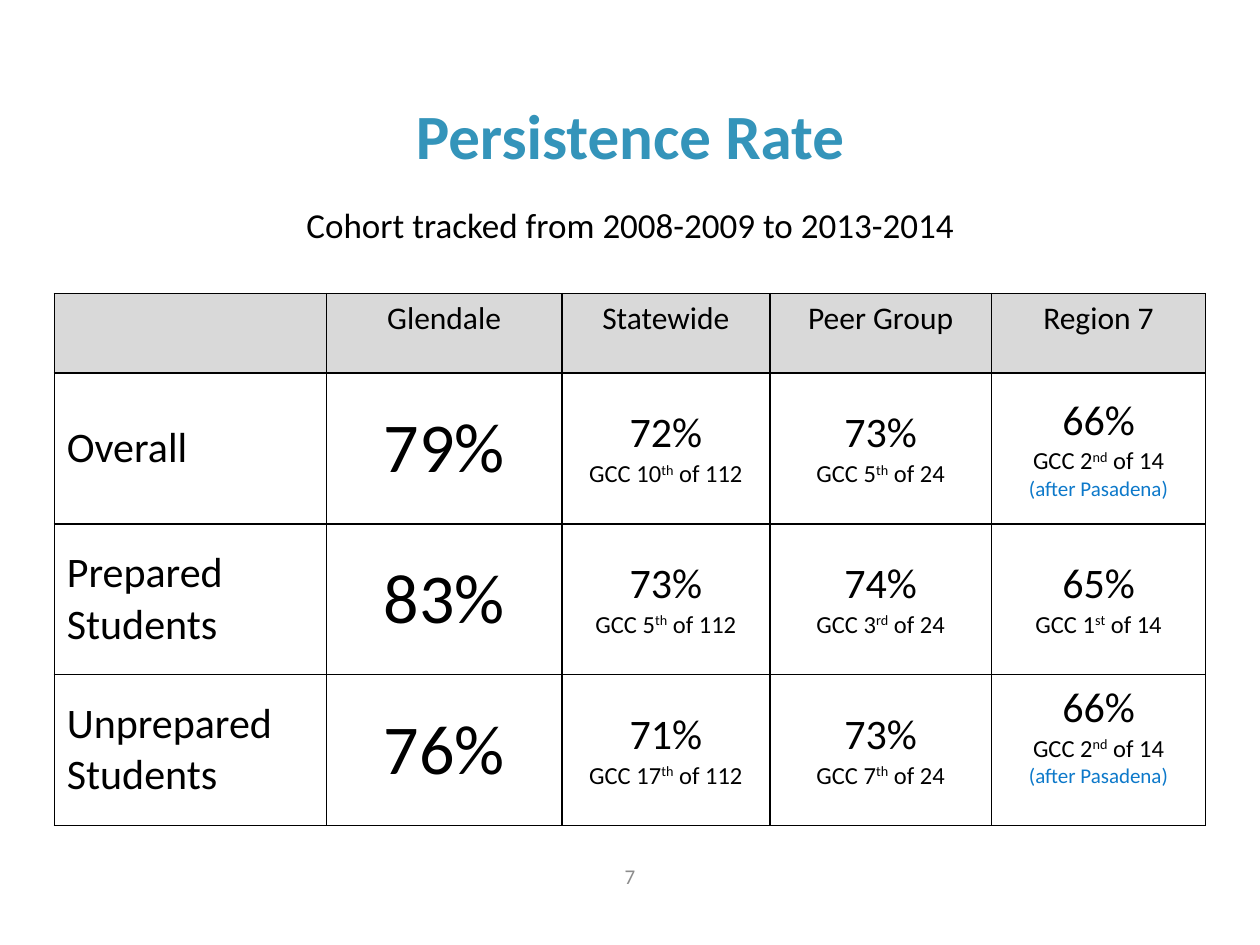
from lxml import etree
from pptx import Presentation
from pptx.dml.color import RGBColor
from pptx.enum.text import MSO_ANCHOR, PP_ALIGN
from pptx.oxml.ns import qn
from pptx.util import Pt

LEFT, CENTER = PP_ALIGN.LEFT, PP_ALIGN.CENTER
TOP, MIDDLE = MSO_ANCHOR.TOP, MSO_ANCHOR.MIDDLE
FONT = "Calibri"
BLACK, TEAL, BLUE, GRAY, HEADER_FILL = "000000", "3494BA", "0D79CA", "8C8C8C", "D9D9D9"

# Content: each comparison is rate, rank, ordinal suffix, group size, optional note
HEADERS = ["", "Glendale", "Statewide", "Peer Group", "Region 7"]
NOTE = "(after Pasadena)"
ROWS = [
    (["Overall"], "79%", [("72%", 10, "th", 112, ""), ("73%", 5, "th", 24, ""),
                          ("66%", 2, "nd", 14, NOTE)]),
    (["Prepared", "Students"], "83%", [("73%", 5, "th", 112, ""), ("74%", 3, "rd", 24, ""),
                                       ("65%", 1, "st", 14, "")]),
    (["Unprepared", "Students"], "76%", [("71%", 17, "th", 112, ""), ("73%", 7, "th", 24, ""),
                                         ("66%", 2, "nd", 14, NOTE)]),
]
COLUMN_WIDTHS = [155.5, 134.6, 118.8, 126.7, 122.4]
ROW_HEIGHTS = [45.4, 86.2, 86.2, 86.2]
TABLE_LEFT, TABLE_TOP = 31, 167.8


def rgb(color):
    return RGBColor.from_string(color)


def write(frame, lines, align=CENTER):
    """Each line is (spans, size, color); a span is (text, raised)."""
    for index, (spans, size, color) in enumerate(lines):
        para = frame.paragraphs[0] if index == 0 else frame.add_paragraph()
        para.alignment = align
        para.font.name, para.font.size = FONT, Pt(size)
        para.font.color.rgb = rgb(color)
        for text, raised in spans:
            span = para.add_run()
            span.text = text
            if raised:
                span.font._element.set("baseline", "30000")


def line(text, size, color=BLACK):
    return [(text, False)], size, color


def add_text(page, place, text, size, color, wrap=True, anchor=TOP):
    frame = page.shapes.add_textbox(*map(Pt, place)).text_frame
    frame.word_wrap = wrap
    frame.vertical_anchor = anchor
    write(frame, [line(text, size, color)])
    return frame.paragraphs[0]


def add_borders(cell):
    properties = cell._tc.get_or_add_tcPr()
    for side in ("a:lnL", "a:lnR", "a:lnT", "a:lnB"):
        border = etree.SubElement(properties, qn(side), w=str(Pt(1)))
        fill = etree.SubElement(border, qn("a:solidFill"))
        etree.SubElement(fill, qn("a:srgbClr"), val=BLACK)


def fill_cell(cell, lines, align=CENTER, anchor=MIDDLE):
    cell.vertical_anchor = anchor
    write(cell.text_frame, lines, align)


def comparison_lines(rate, rank, suffix, total, note):
    ranking = [(f"GCC {rank}", False), (suffix, True), (f" of {total}", False)]
    lines = [line(rate, 24), (ranking, 14, BLACK)]
    return lines + [line(note, 12, BLUE)] if note else lines


deck = Presentation()
deck.slide_width, deck.slide_height = Pt(720), Pt(540)
page = deck.slides.add_slide(deck.slide_layouts[6])

# Title, page number and subtitle
title = add_text(page, (229, 51.8, 262, 51), "Persistence Rate", 36, TEAL, wrap=False)
title.font.bold = True
add_text(page, (288, 486, 144, 28.8), "7", 12, GRAY, anchor=MIDDLE)
subtitle = add_text(page, (74, 113, 572.4, 31.5),
                    "Cohort tracked from 2008-2009 to 2013-2014", 20, BLACK)
subtitle.space_after = Pt(24)

# Table grid
table = page.shapes.add_table(
    len(ROW_HEIGHTS), len(COLUMN_WIDTHS), Pt(TABLE_LEFT), Pt(TABLE_TOP),
    Pt(sum(COLUMN_WIDTHS)), Pt(sum(ROW_HEIGHTS))).table
table.first_row = table.horz_banding = False
for column, width in zip(table.columns, COLUMN_WIDTHS):
    column.width = Pt(width)
for index, (row, height) in enumerate(zip(table.rows, ROW_HEIGHTS)):
    row.height = Pt(height)
    for cell in row.cells:
        add_borders(cell)
        cell.fill.solid()
        cell.fill.fore_color.rgb = rgb("FFFFFF" if index else HEADER_FILL)

# Table text
for column, header in enumerate(HEADERS):
    if header:
        fill_cell(table.cell(0, column), [line(header, 18)], anchor=TOP)
for row, (label, rate, comparisons) in enumerate(ROWS, start=1):
    fill_cell(table.cell(row, 0), [line(text, 24) for text in label], LEFT)
    fill_cell(table.cell(row, 1), [line(rate, 40)])
    for column, comparison in enumerate(comparisons, start=2):
        fill_cell(table.cell(row, column), comparison_lines(*comparison))

# The last cell sits a little above the middle
table.cell(len(ROWS), len(HEADERS) - 1).margin_bottom = Pt(19.6)

deck.save("out.pptx")
